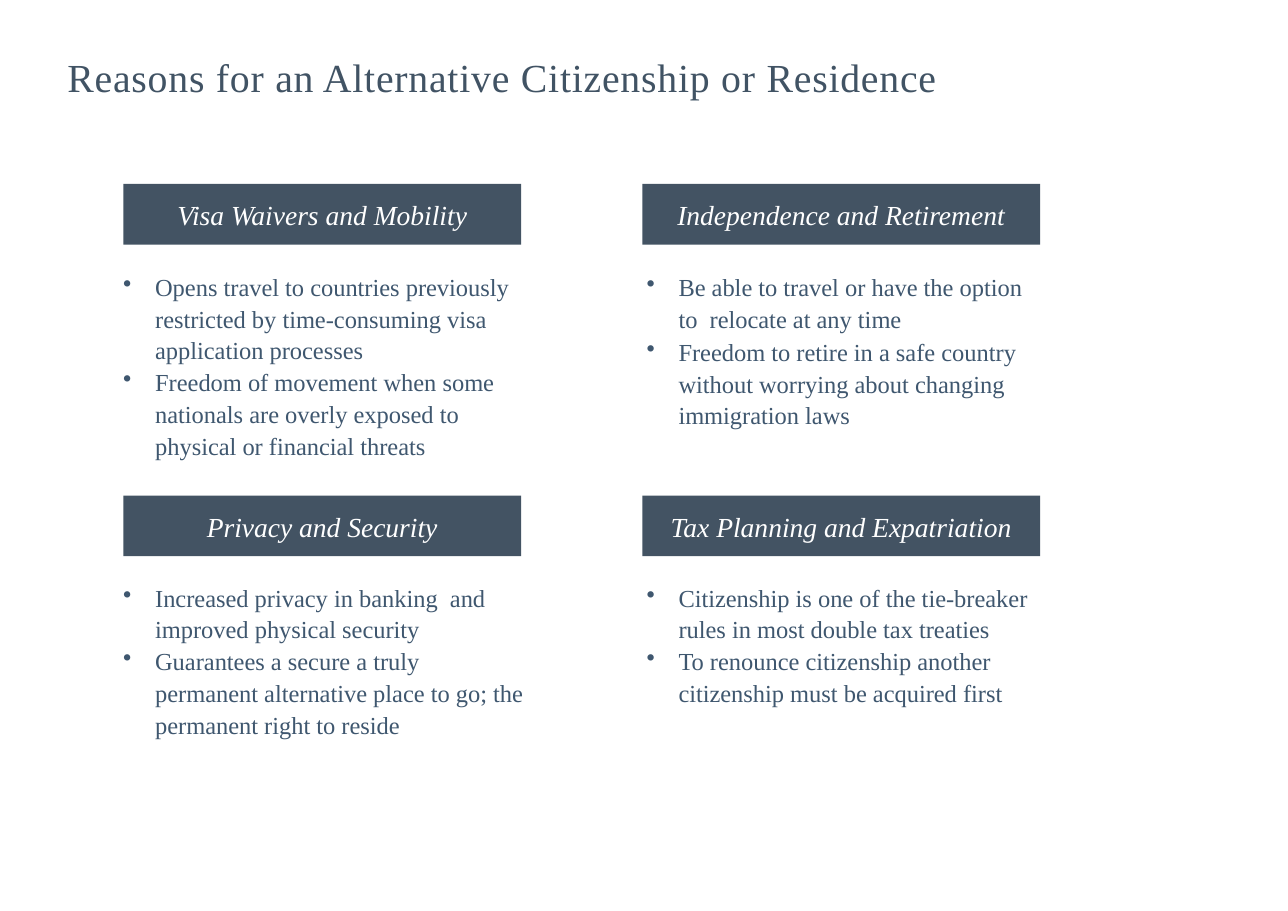
from lxml import etree
from pptx import Presentation
from pptx.dml.color import RGBColor
from pptx.enum.shapes import MSO_SHAPE
from pptx.enum.text import MSO_ANCHOR, MSO_AUTO_SIZE, PP_ALIGN
from pptx.oxml.ns import qn
from pptx.util import Emu, Pt

RECTANGLE = MSO_SHAPE.RECTANGLE
TOP, MIDDLE = MSO_ANCHOR.TOP, MSO_ANCHOR.MIDDLE
LEFT, CENTER = PP_ALIGN.LEFT, PP_ALIGN.CENTER
FIT_SHAPE = MSO_AUTO_SIZE.SHAPE_TO_FIT_TEXT

THEME = {
    "font": "Times New Roman",
    "title": RGBColor.from_string("415364"),
    "banner": RGBColor.from_string("435363"),
    "banner_text": RGBColor.from_string("FFFFFF"),
    "body": RGBColor.from_string("3F576F"),
    "title_size": 26,
    "banner_size": 18,
    "body_size": 16,
}


def px(length):
    """Turn px, at 100 to the inch, into EMU."""
    return Emu(length * 9144)


def write(box, lines, *, size, color, align=LEFT, anchor=TOP, italic=False,
          tracking=0, line_spacing=1.0, space_before=0, bullet=None):
    """Fill a box with one paragraph per line; tracking is in hundredths of a point."""
    frame = box.text_frame
    frame.word_wrap = True
    frame.vertical_anchor = anchor
    for index, line in enumerate(lines):
        para = frame.paragraphs[0] if index == 0 else frame.add_paragraph()
        para.alignment = align
        para.line_spacing = line_spacing
        para.space_before = Pt(space_before)
        span = para.add_run()
        span.text = line
        span.font.name = THEME["font"]
        span.font.size = Pt(size)
        span.font.italic = italic
        span.font.color.rgb = color
        if tracking:
            span.font._element.set("spc", str(tracking))
        if bullet:
            properties = para._p.get_or_add_pPr()
            properties.set("marL", str(px(31)))
            properties.set("indent", str(px(-29)))
            etree.SubElement(properties, qn("a:buChar")).set("char", bullet)


deck = Presentation()
deck.slide_width, deck.slide_height = px(1169), px(827)
page = deck.slides.add_slide(deck.slide_layouts[6])

title = page.shapes.add_textbox(px(40), px(43), px(833), px(54))
write(title, ["Reasons for an Alternative Citizenship or Residence"],
      size=THEME["title_size"], color=THEME["title"], align=CENTER, tracking=50)
title.text_frame.auto_size = FIT_SHAPE

# Left edges of banner and body by column, top edges of both by row
COLUMNS = [(112, 100), (583, 575)]
ROWS = [(167, 240), (450, 522)]

# Column, row, heading, body height, space before each point, points
REASONS = [
    (0, 0, "Visa Waivers and Mobility", 183, 0, [
        "Opens travel to countries previously restricted by time-consuming visa application processes",
        "Freedom of movement when some nationals are overly exposed to physical or financial threats",
    ]),
    (1, 0, "Independence and Retirement", 155, 0.9, [
        "Be able to travel or have the option to  relocate at any time",
        "Freedom to retire in a safe country without worrying about changing immigration laws",
    ]),
    (0, 1, "Privacy and Security", 153, 0, [
        "Increased privacy in banking  and improved physical security",
        "Guarantees a secure a truly permanent alternative place to go; the permanent right to reside",
    ]),
    (1, 1, "Tax Planning and Expatriation", 124, 0, [
        "Citizenship is one of the tie-breaker rules in most double tax treaties",
        "To renounce citizenship another citizenship must be acquired first",
    ]),
]

for column, row, heading, body_height, space_before, points in REASONS:
    banner_left, body_left = COLUMNS[column]
    banner_top, body_top = ROWS[row]

    banner = page.shapes.add_shape(
        RECTANGLE, px(banner_left), px(banner_top), px(361), px(55))
    banner.shadow.inherit = False
    banner.fill.solid()
    banner.fill.fore_color.rgb = THEME["banner"]
    banner.line.fill.background()
    write(banner, [heading], size=THEME["banner_size"], color=THEME["banner_text"],
          align=CENTER, anchor=MIDDLE, italic=True)

    body = page.shapes.add_textbox(
        px(body_left), px(body_top), px(385), px(body_height))
    write(body, points, size=THEME["body_size"], color=THEME["body"],
          line_spacing=1.08, space_before=space_before, bullet="•")
    body.text_frame.auto_size = FIT_SHAPE

deck.save("out.pptx")
